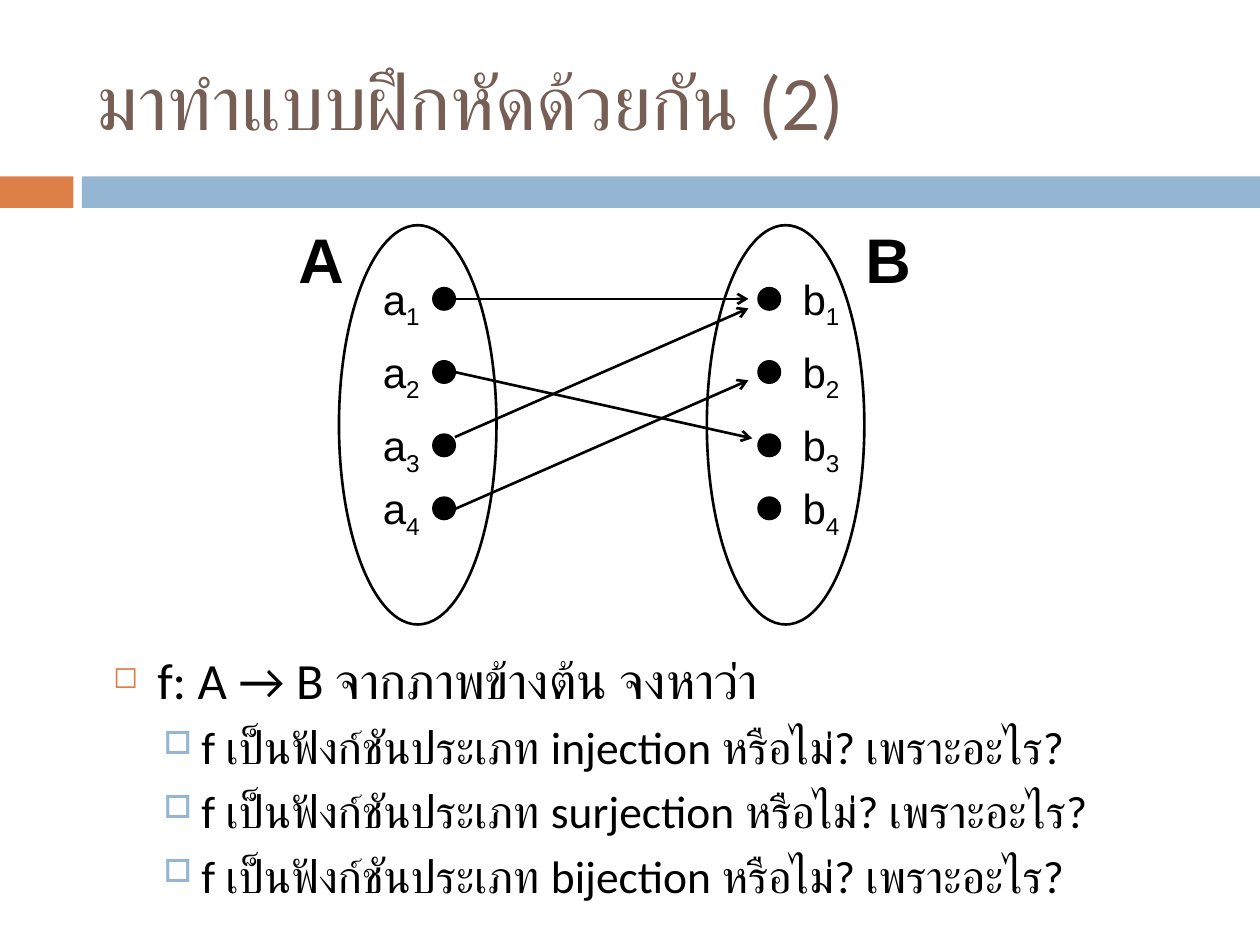
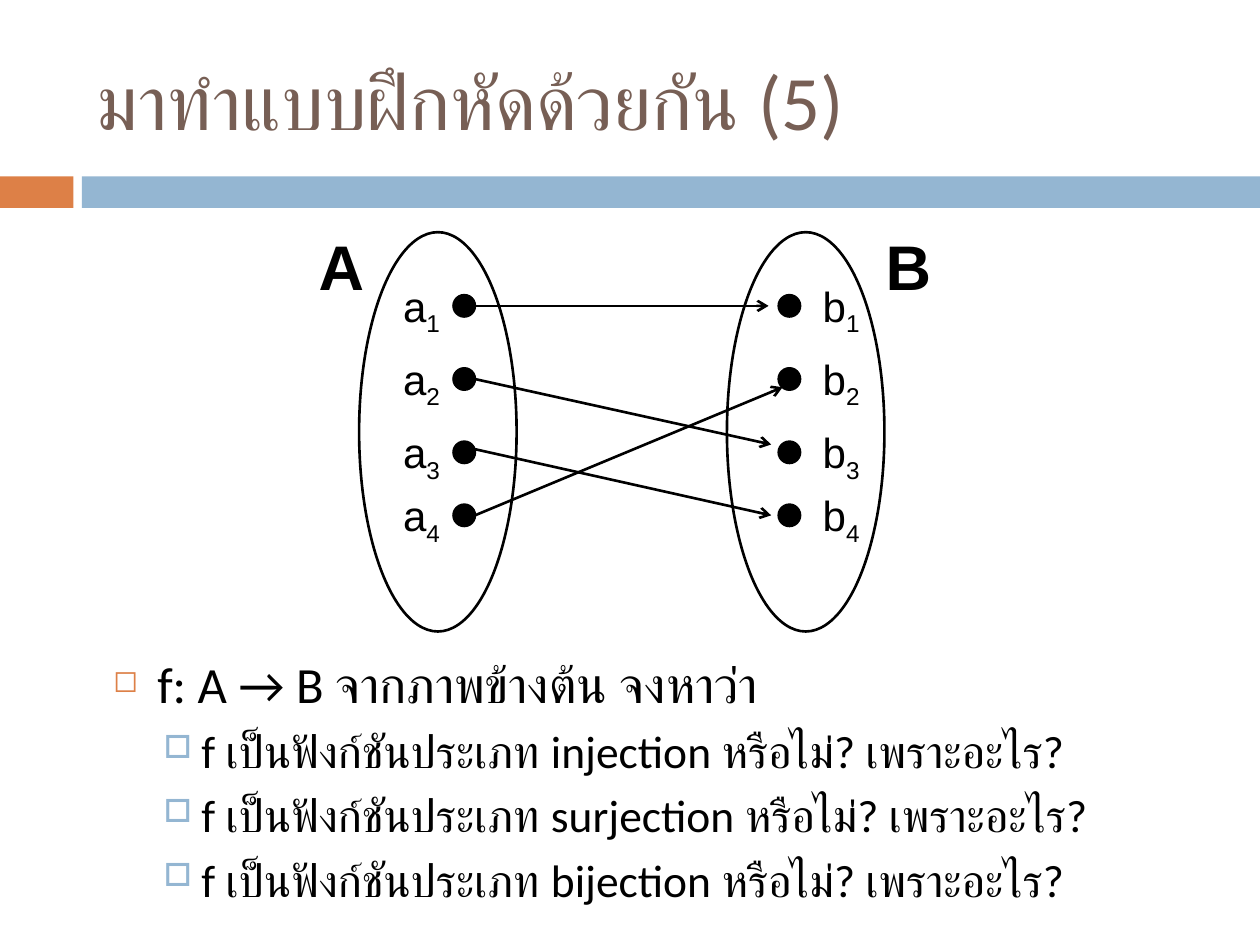
"""Build two exercise slides that ask about the function drawn between sets A and B."""
from dataclasses import dataclass

from lxml import etree
from pptx import Presentation
from pptx.dml.color import RGBColor
from pptx.enum.shapes import MSO_CONNECTOR, MSO_SHAPE
from pptx.enum.text import MSO_ANCHOR
from pptx.oxml.ns import qn
from pptx.util import Pt

RECT, OVAL = MSO_SHAPE.RECTANGLE, MSO_SHAPE.OVAL
STRAIGHT = MSO_CONNECTOR.STRAIGHT
TOP, MIDDLE = MSO_ANCHOR.TOP, MSO_ANCHOR.MIDDLE

TITLE = "มาทำแบบฝึกหัดด้วยกัน ({})"
QUESTION = "f: A → B จากภาพข้างต้น จงหาว่า"
SUB_QUESTION = "f เป็นฟังก์ชันประเภท {} หรือไม่? เพราะอะไร?"
KINDS = ["injection", "surjection", "bijection"]

# Each arrow: from a, to b, gap before the target dot, start rise, end rise.
EXERCISES = [
    dict(number=2, origin=(193.7, 128.7), body=(367.2, 146.2), arrows=[
        (1, 1, 5.8, 0, 0), (2, 3, 3.6, 0, -4),
        (3, 1, 5.8, -4.7, 5.4), (4, 2, 5.8, 0.4, 4.7)]),
    dict(number=5, origin=(205.2, 132.7), body=(369.4, 104.4), arrows=[
        (1, 1, 5.8, 0, 0), (2, 3, 4.3, 0, -4.5),
        (3, 4, 4.3, -1.8, 0), (4, 2, -2.2, 0, 4.7)]),
]


@dataclass(frozen=True)
class Theme:
    """Colours, fonts and sizes shared by the slides."""
    title: str = "775F55"
    accent: str = "DD8047"
    band: str = "94B6D2"
    ink: str = "000000"
    body_font: str = "Calibri"
    diagram_font: str = "Arial"
    title_size: float = 44
    question_size: float = 29
    sub_size: float = 26
    set_size: float = 36
    label_size: float = 24
    line: float = 1.5


T = Theme()
BANDS = [(0, 42, T.accent), (46.8, 673.2, T.band)]
BAND_TOP, BAND_H = 100.8, 18
LEVELS = [dict(size=T.question_size, indent=25.2, hang=25.2, before=7,
               bullet="◻", color=T.accent, scale=60),
          dict(size=T.sub_size, indent=50.4, hang=21.6, before=5.5,
               bullet="□", color=T.band, scale=70)]

SET_W, SET_H = 90, 228.2
DOT = 12.2
DOT_TOPS = [36, 77.8, 119.7, 155.7]
LABEL_RISE = 12.2
SETS = [dict(name="A", left=0, dots=54, labels=18, name_left=-30.2),
        dict(name="B", left=210.2, dots=239.8, labels=257.8, name_left=293.8)]


def rgb(color):
    return RGBColor.from_string(color)


def write(p, text, size, font=T.body_font, color=T.ink, bold=False, baseline=None):
    r = p.add_run()
    r.text = text
    r.font.size, r.font.name, r.font.bold = Pt(size), font, bold
    r.font.color.rgb = rgb(color)
    if baseline:
        r.font._element.set("baseline", str(baseline))


def add_text(s, x, y, w, h, anchor=TOP):
    tf = s.shapes.add_textbox(Pt(x), Pt(y), Pt(w), Pt(h)).text_frame
    tf.word_wrap, tf.vertical_anchor = True, anchor
    return tf


def add_shape(s, kind, x, y, w, h, fill=None, line=None):
    sp = s.shapes.add_shape(kind, Pt(x), Pt(y), Pt(w), Pt(h))
    sp.shadow.inherit = False
    if fill:
        sp.fill.solid()
        sp.fill.fore_color.rgb = rgb(fill)
    else:
        sp.fill.background()
    if line:
        sp.line.color.rgb, sp.line.width = rgb(line), Pt(T.line)
    else:
        sp.line.fill.background()


def add_arrow(s, x1, y1, x2, y2):
    c = s.shapes.add_connector(STRAIGHT, Pt(x1), Pt(y1), Pt(x2), Pt(y2))
    c.line.color.rgb, c.line.width = rgb(T.ink), Pt(T.line)
    sp_pr = c.element.spPr
    etree.SubElement(sp_pr.find(qn("a:ln")), qn("a:tailEnd"), type="arrow")
    etree.SubElement(sp_pr, qn("a:effectLst"))


def add_bullet(p, text, level):
    f = LEVELS[level]
    p.level, p.space_before = level, Pt(f["before"])
    pr = p._p.get_or_add_pPr()
    pr.set("marL", str(Pt(f["indent"])))
    pr.set("indent", str(-Pt(f["hang"])))
    color = etree.SubElement(pr, qn("a:buClr"))
    etree.SubElement(color, qn("a:srgbClr"), val=f["color"])
    etree.SubElement(pr, qn("a:buSzPct"), val=str(f["scale"] * 1000))
    etree.SubElement(pr, qn("a:buChar"), char=f["bullet"])
    write(p, text, f["size"])


def add_frame(s, number):
    for x, w, color in BANDS:
        add_shape(s, RECT, x, BAND_TOP, w, BAND_H, fill=color)
    tf = add_text(s, 48.2, 18, 642.2, 77.8, MIDDLE)
    write(tf.paragraphs[0], TITLE.format(number), T.title_size, color=T.title)


def add_set(s, x, y, name, left, dots, labels, name_left):
    add_shape(s, OVAL, x + left, y, SET_W, SET_H, line=T.ink)
    tf = add_text(s, x + name_left, y - 6.2, 48.2, 51.1)
    write(tf.paragraphs[0], name, T.set_size, T.diagram_font, bold=True)
    for i, top in enumerate(DOT_TOPS, 1):
        add_shape(s, OVAL, x + dots, y + top, DOT, DOT, fill=T.ink, line=T.ink)
        p = add_text(s, x + labels, y + top - LABEL_RISE, 41.8, 36.7).paragraphs[0]
        write(p, name.lower(), T.label_size, T.diagram_font)
        write(p, str(i), T.label_size, T.diagram_font, baseline=-25000)


def add_diagram(s, origin, arrows):
    x, y = origin
    for part in SETS:
        add_set(s, x, y, **part)
    start = x + SETS[0]["dots"] + DOT
    target = x + SETS[1]["dots"]
    centers = [y + top + DOT / 2 for top in DOT_TOPS]
    for a, b, gap, start_dy, end_dy in arrows:
        add_arrow(s, start, centers[a - 1] + start_dy,
                  target - gap, centers[b - 1] + end_dy)


def add_questions(s, top, height):
    tf = add_text(s, 57.6, top, 648, height)
    add_bullet(tf.paragraphs[0], QUESTION, 0)
    for kind in KINDS:
        add_bullet(tf.add_paragraph(), SUB_QUESTION.format(kind), 1)


def main():
    prs = Presentation()
    prs.slide_width, prs.slide_height = Pt(720), Pt(540)
    for ex in EXERCISES:
        s = prs.slides.add_slide(prs.slide_layouts[6])
        add_frame(s, ex["number"])
        add_diagram(s, ex["origin"], ex["arrows"])
        add_questions(s, *ex["body"])
    prs.save("out.pptx")


if __name__ == "__main__":
    main()
